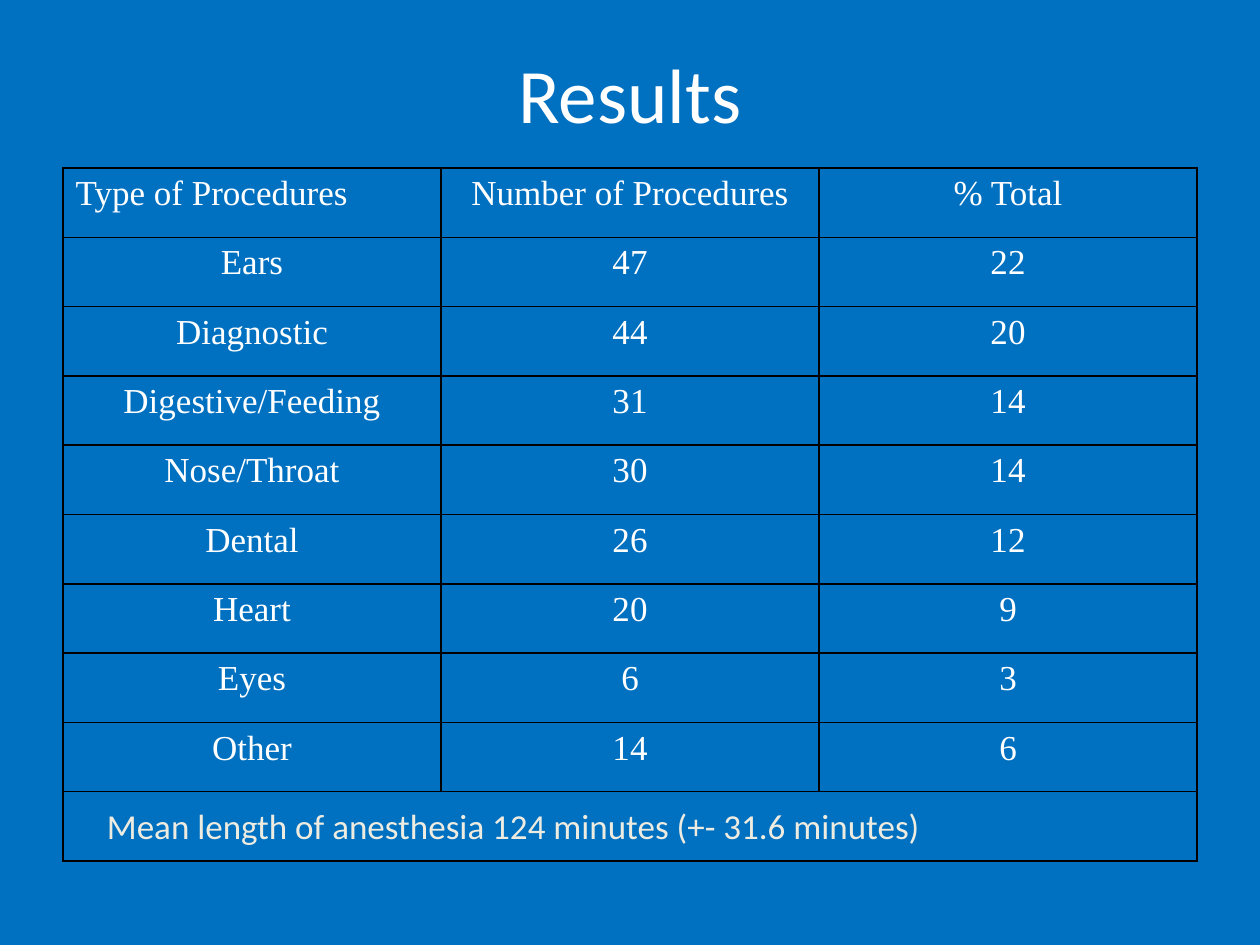
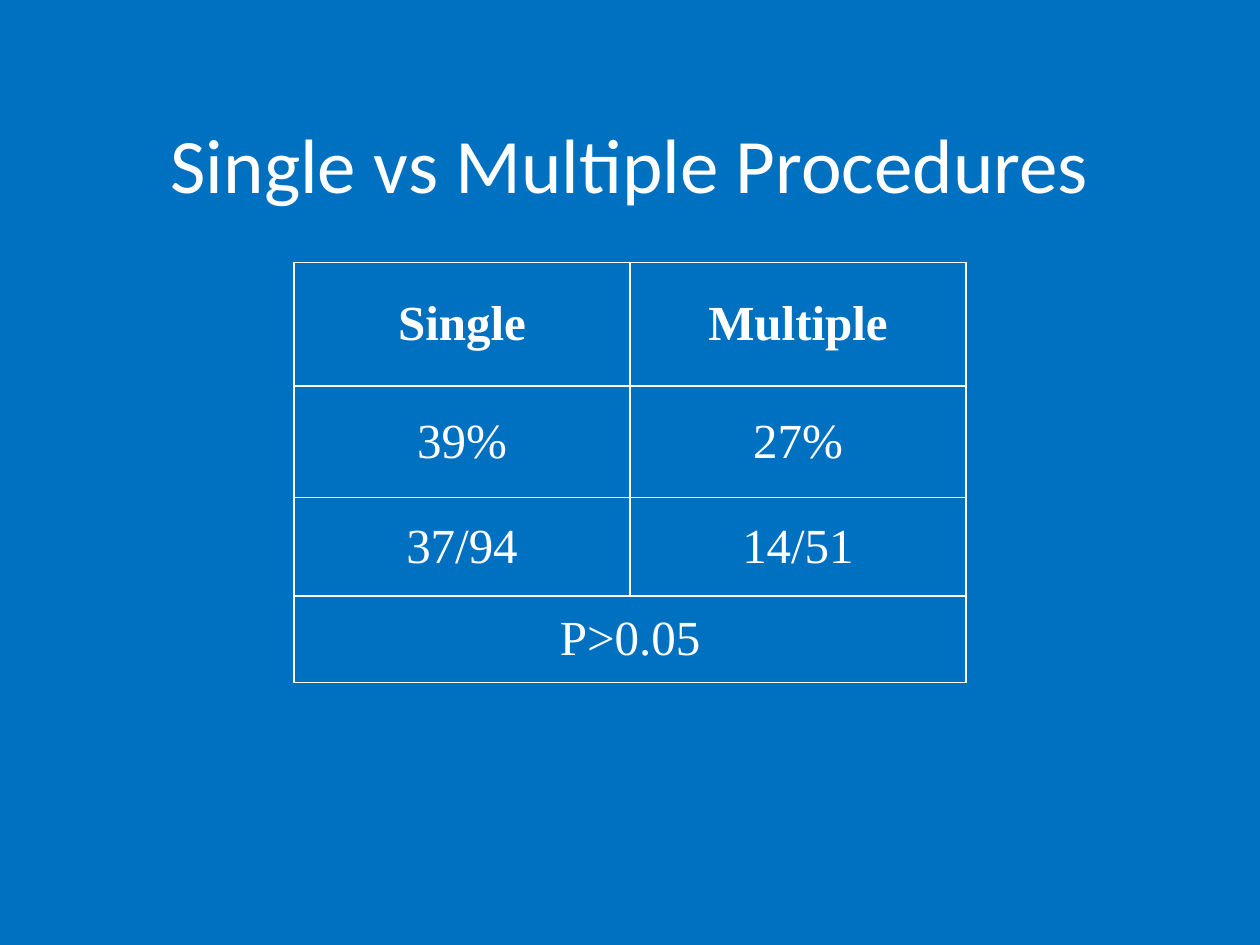
from dataclasses import dataclass
from typing import Any

from lxml import etree
from pptx import Presentation
from pptx.dml.color import RGBColor
from pptx.enum.text import MSO_ANCHOR, MSO_AUTO_SIZE, PP_ALIGN
from pptx.oxml.ns import qn
from pptx.util import Inches, Pt

LEFT, CENTER = PP_ALIGN.LEFT, PP_ALIGN.CENTER
TOP, MIDDLE = MSO_ANCHOR.TOP, MSO_ANCHOR.MIDDLE
NO_AUTOFIT = MSO_AUTO_SIZE.NONE
TITLE_ONLY = 5

COLORS = {"background": "0070C0", "text": "FFFFFF", "note": "EEECE1",
          "dark line": "000000", "light line": "FFFFFF"}
SANS, SERIF = "Calibri", "Times New Roman"

# The slide is a grid of 120 columns by 90 rows
SLIDE_WIDTH, SLIDE_HEIGHT = Inches(10), Inches(7.5)
COLUMN, ROW = SLIDE_WIDTH / 120, SLIDE_HEIGHT / 90
BORDER_WIDTH = Pt(1)
HANGING_INDENT = Inches(0.38)


@dataclass
class Area:
    """A place on the slide, in grid columns and rows."""
    left: float
    top: float
    width: float
    height: float

    def place(self, shape: Any) -> None:
        shape.left, shape.top, shape.width, shape.height = self.lengths()

    def lengths(self) -> tuple[int, ...]:
        return (round(self.left * COLUMN), round(self.top * ROW),
                round(self.width * COLUMN), round(self.height * ROW))


@dataclass
class TableStyle:
    size: int
    line: str
    anchor: Any = TOP
    first_align: Any = CENTER
    bold_header: bool = False
    hanging: bool = False


@dataclass
class TableSpec:
    area: Area
    rows: list[list[str]]
    row_heights: list[float]
    style: TableStyle
    merge_last_row: bool = False


def write(paragraph: Any, text: str, size: int, font: str = SANS,
          color: str = "text", bold: bool = False, align: Any = CENTER) -> None:
    paragraph.text = text
    paragraph.alignment = align
    for name, value in {"size": Pt(size), "name": font, "bold": bold}.items():
        setattr(paragraph.font, name, value)
    paragraph.font.color.rgb = RGBColor.from_string(COLORS[color])


def add_titled_slide(presentation: Any, title: str, area: Area) -> Any:
    slide = presentation.slides.add_slide(presentation.slide_layouts[TITLE_ONLY])
    shape = slide.shapes.title
    area.place(shape)
    frame = shape.text_frame
    frame.auto_size, frame.vertical_anchor = NO_AUTOFIT, MIDDLE
    write(frame.paragraphs[0], title, 44)
    return slide


def set_borders(cell: Any, color: str, hidden: set[str]) -> None:
    properties = cell._tc.get_or_add_tcPr()
    for side in "LRTB":
        line = etree.SubElement(properties, qn(f"a:ln{side}"), w=str(BORDER_WIDTH))
        if side in hidden:
            etree.SubElement(line, qn("a:noFill"))
        else:
            fill = etree.SubElement(line, qn("a:solidFill"))
            etree.SubElement(fill, qn("a:srgbClr"), val=COLORS[color])


def add_grid_table(slide: Any, spec: TableSpec) -> None:
    style = spec.style
    row_count, column_count = len(spec.rows), len(spec.rows[0])
    table = slide.shapes.add_table(row_count, column_count, *spec.area.lengths()).table
    table.first_row = table.horz_banding = False
    for row, height in zip(table.rows, spec.row_heights):
        row.height = round(height * ROW)

    for row_index, values in enumerate(spec.rows):
        for column_index, value in enumerate(values):
            cell = table.cell(row_index, column_index)
            # A row without text has no lines between its cells
            hidden = set()
            if not any(values):
                hidden |= {"L"} if column_index > 0 else set()
                hidden |= {"R"} if column_index < column_count - 1 else set()
            set_borders(cell, style.line, hidden)
            cell.fill.background()
            cell.vertical_anchor = style.anchor
            if not value:
                continue
            paragraph = cell.text_frame.paragraphs[0]
            if style.hanging:
                properties = paragraph._p.get_or_add_pPr()
                properties.set("marL", str(HANGING_INDENT))
                properties.set("indent", str(-HANGING_INDENT))
            is_first = row_index == column_index == 0
            write(paragraph, value, style.size, SERIF,
                  bold=style.bold_header and row_index == 0,
                  align=style.first_align if is_first else CENTER)
    if spec.merge_last_row:
        table.cell(row_count - 1, 0).merge(table.cell(row_count - 1, column_count - 1))


def add_note(slide: Any, text: str, area: Area) -> None:
    frame = slide.shapes.add_textbox(*area.lengths()).text_frame
    frame.word_wrap = True
    write(frame.paragraphs[0], text, 20, color="note", align=LEFT)


PROCEDURES = TableSpec(
    area=Area(6, 16, 108, 66),
    rows=[
        ["Type of Procedures", "Number of Procedures", "% Total"],
        ["Ears", "47", "22"],
        ["Diagnostic", "44", "20"],
        ["Digestive/Feeding", "31", "14"],
        ["Nose/Throat", "30", "14"],
        ["Dental", "26", "12"],
        ["Heart", "20", "9"],
        ["Eyes", "6", "3"],
        ["Other", "14", "6"],
        ["", "", ""],
    ],
    row_heights=[6.6] * 10,
    style=TableStyle(20, "dark line", first_align=LEFT, hanging=True),
)

COMPARISON = TableSpec(
    area=Area(28, 25, 64, 40),
    rows=[["Single", "Multiple"], ["39%", "27%"], ["37/94", "14/51"], ["P>0.05", ""]],
    row_heights=[11.75, 10.65, 9.35, 8.25],
    style=TableStyle(28, "light line", anchor=MIDDLE, bold_header=True),
    merge_last_row=True,
)


def main() -> None:
    presentation = Presentation()
    presentation.slide_width, presentation.slide_height = SLIDE_WIDTH, SLIDE_HEIGHT

    # Shared background
    background = presentation.slide_master.background.fill
    background.solid()
    background.fore_color.rgb = RGBColor.from_string(COLORS["background"])

    # Procedures by type
    slide = add_titled_slide(presentation, "Results", Area(6, 3.6, 108, 10.4))
    add_grid_table(slide, PROCEDURES)
    add_note(slide, "Mean length of anesthesia 124 minutes (+- 31.6 minutes)",
             Area(9, 76, 103, 5.2))

    # Single against multiple procedures
    slide = add_titled_slide(presentation, "Single vs Multiple Procedures",
                             Area(9, 8, 102, 15))
    add_grid_table(slide, COMPARISON)

    presentation.save("out.pptx")


if __name__ == "__main__":
    main()
